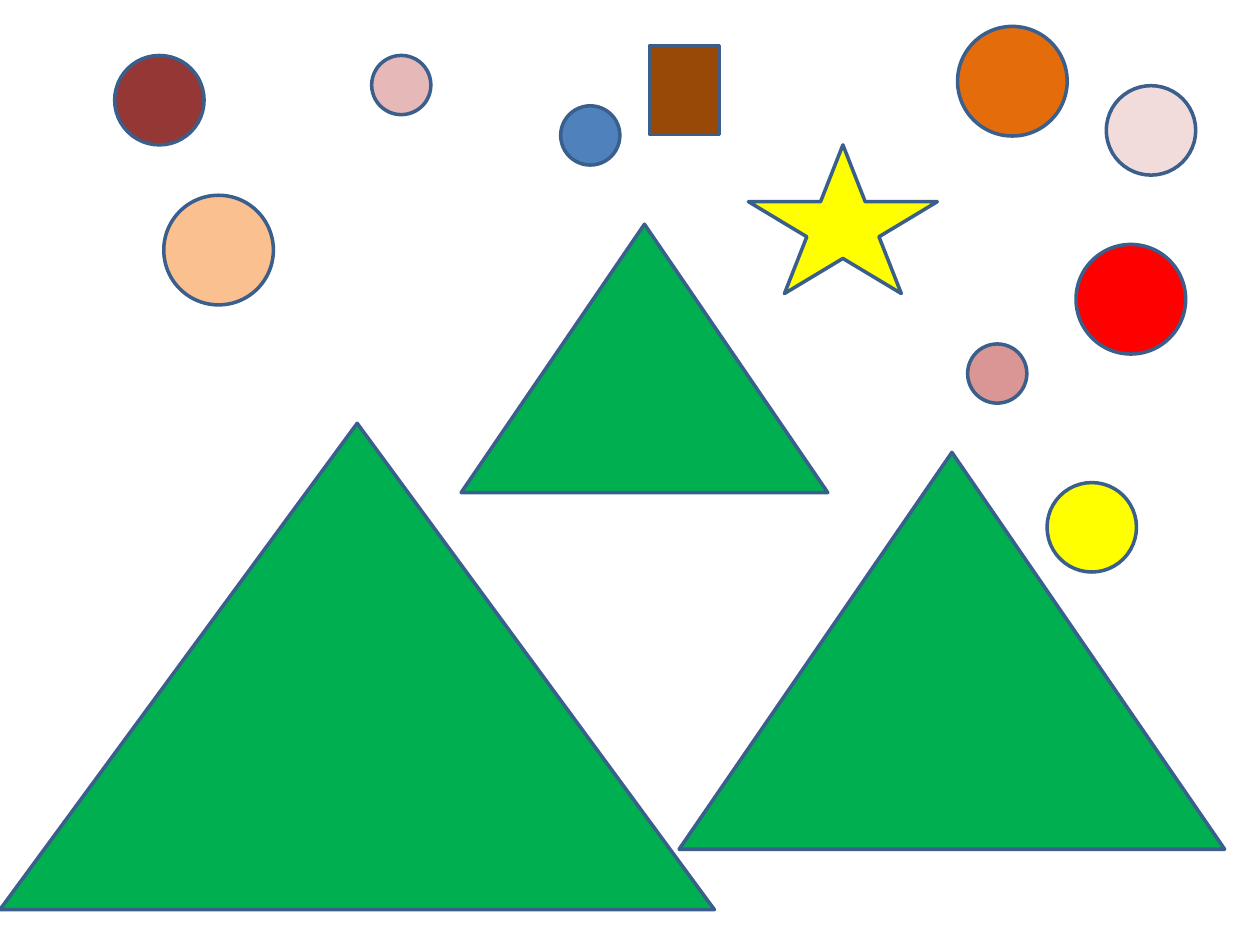
from pptx import Presentation
from pptx import util as u
from pptx.dml.color import RGBColor
from pptx.enum import shapes

GREEN = RGBColor(0x00, 0xB0, 0x50)
YELLOW = RGBColor(0xFF, 0xFF, 0x00)
BROWN = RGBColor(0x98, 0x48, 0x07)
RED = RGBColor(0xFF, 0x00, 0x00)
ROSE = RGBColor(0xE6, 0xB9, 0xB8)
BLUE = RGBColor(0x4F, 0x81, 0xBD)
MAROON = RGBColor(0x95, 0x37, 0x35)
PEACH = RGBColor(0xFA, 0xC0, 0x90)
ORANGE = RGBColor(0xE4, 0x6C, 0x0A)
BLUSH = RGBColor(0xF2, 0xDC, 0xDB)
PINK = RGBColor(0xD9, 0x96, 0x94)
EDGE = RGBColor(0x3A, 0x5F, 0x8C)

KIND = shapes.MSO_SHAPE
SMALL, MID, LARGE = 0.47, 0.71, 0.87

# left, top, width, height
TREES = [
    (0, 3.36, 5.67, 3.86),
    (5.39, 3.59, 4.33, 3.15),
    (3.66, 1.78, 2.91, 2.13),
]
STAR = (5.94, 1.15, 1.5, 1.18)
BLOCK = (5.16, 0.36, 0.55, 0.71)

# left, top, diameter, colour
BALLS = [
    (8.54, 1.94, LARGE, RED),
    (8.31, 3.83, MID, YELLOW),
    (2.95, 0.44, SMALL, ROSE),
    (4.45, 0.84, SMALL, BLUE),
    (0.91, 0.44, MID, MAROON),
    (1.3, 1.55, LARGE, PEACH),
    (7.6, 0.21, LARGE, ORANGE),
    (8.78, 0.68, MID, BLUSH),
    (7.68, 2.73, SMALL, PINK),
]


def draw(slide, kind, box, fill):
    shape = slide.shapes.add_shape(kind, *map(u.Inches, box))
    shape.shadow.inherit = False
    shape.fill.solid()
    shape.fill.fore_color.rgb = fill
    shape.line.color.rgb = EDGE
    shape.line.width = u.Pt(2)


def main():
    deck = Presentation()
    deck.slide_width, deck.slide_height = u.Inches(10), u.Inches(7.5)
    slide = deck.slides.add_slide(deck.slide_layouts[6])
    for box in TREES:
        draw(slide, KIND.ISOSCELES_TRIANGLE, box, GREEN)
    draw(slide, KIND.STAR_5_POINT, STAR, YELLOW)
    draw(slide, KIND.RECTANGLE, BLOCK, BROWN)
    for left, top, size, fill in BALLS:
        draw(slide, KIND.OVAL, (left, top, size, size), fill)
    deck.save("out.pptx")


if __name__ == "__main__":
    main()
